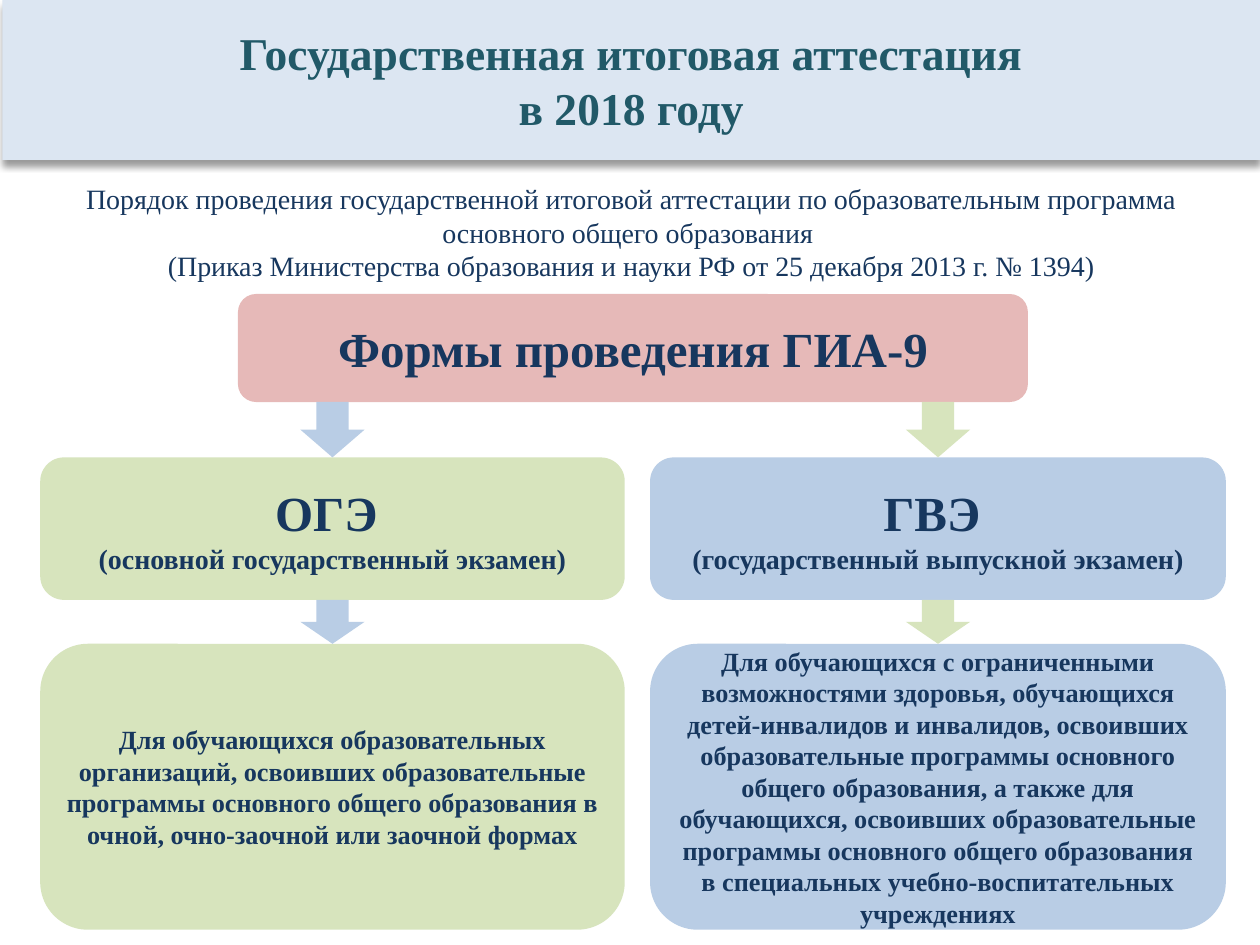
from lxml.etree import SubElement
from pptx import Presentation
from pptx.dml.color import RGBColor
from pptx.enum.shapes import MSO_SHAPE as Shape
from pptx.enum.text import MSO_ANCHOR as Anchor, PP_ALIGN as Align
from pptx.oxml.ns import qn
from pptx.util import Pt

COLORS = {
    "pale": "DCE6F2", "teal": "215968", "white": "FFFFFF", "navy": "17375E",
    "rose": "E6B9B8", "green": "D7E4BD", "blue": "B9CDE5", "black": "000000",
}
COLUMNS = [
    {
        "left": 23, "width": 334, "fill": "green", "arrow": "blue",
        "exam": [("ОГЭ ", 28), ("(основной государственный экзамен)", 16)],
        "audience": [
            ("Для обучающихся образовательных организаций, освоивших образовательные "
             "программы основного общего образования в очной, очно-заочной или заочной формах", 15),
        ],
    },
    {
        "left": 371.5, "width": 329, "fill": "blue", "arrow": "green",
        "exam": [("ГВЭ ", 28), ("(государственный выпускной экзамен)", 16)],
        "audience": [
            ("Для обучающихся с ограниченными возможностями здоровья, обучающихся "
             "детей-инвалидов и инвалидов, освоивших образовательные программы основного "
             "общего образования, а также для", 15),
            ("обучающихся, освоивших образовательные программы основного общего образования "
             "в специальных учебно-воспитательных учреждениях", 15),
        ],
    },
]
FORMS_TOP, FORMS_HEIGHT = 168, 61.7
EXAM_TOP, EXAM_HEIGHT = 261.4, 81.4
AUDIENCE_TOP, AUDIENCE_HEIGHT = 367.9, 163.4
ARROW_WIDTH = 36.7


class SlideBuilder:
    """Holds the text style and the current slide and draws its elements."""

    def __init__(self, slide):
        self.slide = slide
        self.font = {"name": "Times New Roman", "bold": True}

    def color(self, name):
        return RGBColor.from_string(COLORS[name])

    def block(self, kind, left, top, width, height, fill):
        box = [Pt(value) for value in (left, top, width, height)]
        shape = self.slide.shapes.add_shape(kind, *box)
        shape.shadow.inherit = False
        shape.fill.solid()
        shape.fill.fore_color.rgb = self.color(fill)
        shape.line.fill.background()
        return shape

    def panel(self, box, fill, lines, kind=Shape.ROUNDED_RECTANGLE, color="navy", **changes):
        shape = self.block(kind, *box, fill)
        frame = shape.text_frame
        frame.word_wrap = True
        frame.vertical_anchor = Anchor.MIDDLE
        for index, (text, size) in enumerate(lines):
            paragraph = frame.add_paragraph() if index else frame.paragraphs[0]
            paragraph.alignment = Align.CENTER
            run = paragraph.add_run()
            run.text = text
            run.font.color.rgb = self.color(color)
            for name, value in {**self.font, "size": Pt(size), **changes}.items():
                setattr(run.font, name, value)
        return shape

    def arrow(self, center, top, bottom, fill):
        left = center - ARROW_WIDTH / 2
        self.block(Shape.DOWN_ARROW, left, top, ARROW_WIDTH, bottom - top, fill)

    def shadow(self, shape):
        effects = shape._element.spPr.find(qn("a:effectLst"))
        outer = SubElement(effects, qn("a:outerShdw"), blurRad=str(Pt(4)), dist=str(Pt(3)),
                           dir="5400000", rotWithShape="0")
        tint = SubElement(outer, qn("a:srgbClr"), val=COLORS["black"])
        SubElement(tint, qn("a:alpha"), val="40000")


def main():
    presentation = Presentation()
    presentation.slide_width, presentation.slide_height = Pt(720), Pt(540)
    builder = SlideBuilder(presentation.slides.add_slide(presentation.slide_layouts[6]))

    title = [("Государственная итоговая аттестация", 26), ("в 2018 году", 26)]
    builder.shadow(builder.panel((1.4, 0, 718.6, 91.4), "pale", title,
                                 kind=Shape.RECTANGLE, color="teal"))
    order = [
        ("Порядок проведения государственной итоговой аттестации по образовательным "
         "программа основного общего образования ", 16),
        ("(Приказ Министерства образования и науки РФ от 25 декабря 2013 г. № 1394)", 16),
    ]
    builder.panel((16.6, 100.8, 688.3, 63.4), "white", order, bold=False)
    builder.panel((136, FORMS_TOP, 451.4, FORMS_HEIGHT), "rose", [("Формы проведения ГИА-9", 28)])

    for column in COLUMNS:
        left, width = column["left"], column["width"]
        center = left + width / 2
        builder.panel((left, EXAM_TOP, width, EXAM_HEIGHT), column["fill"], column["exam"])
        builder.panel((left, AUDIENCE_TOP, width, AUDIENCE_HEIGHT), column["fill"],
                      column["audience"])
        builder.arrow(center, FORMS_TOP + FORMS_HEIGHT, EXAM_TOP, column["arrow"])
        builder.arrow(center, EXAM_TOP + EXAM_HEIGHT, AUDIENCE_TOP, column["arrow"])

    presentation.save("out.pptx")


if __name__ == "__main__":
    main()
